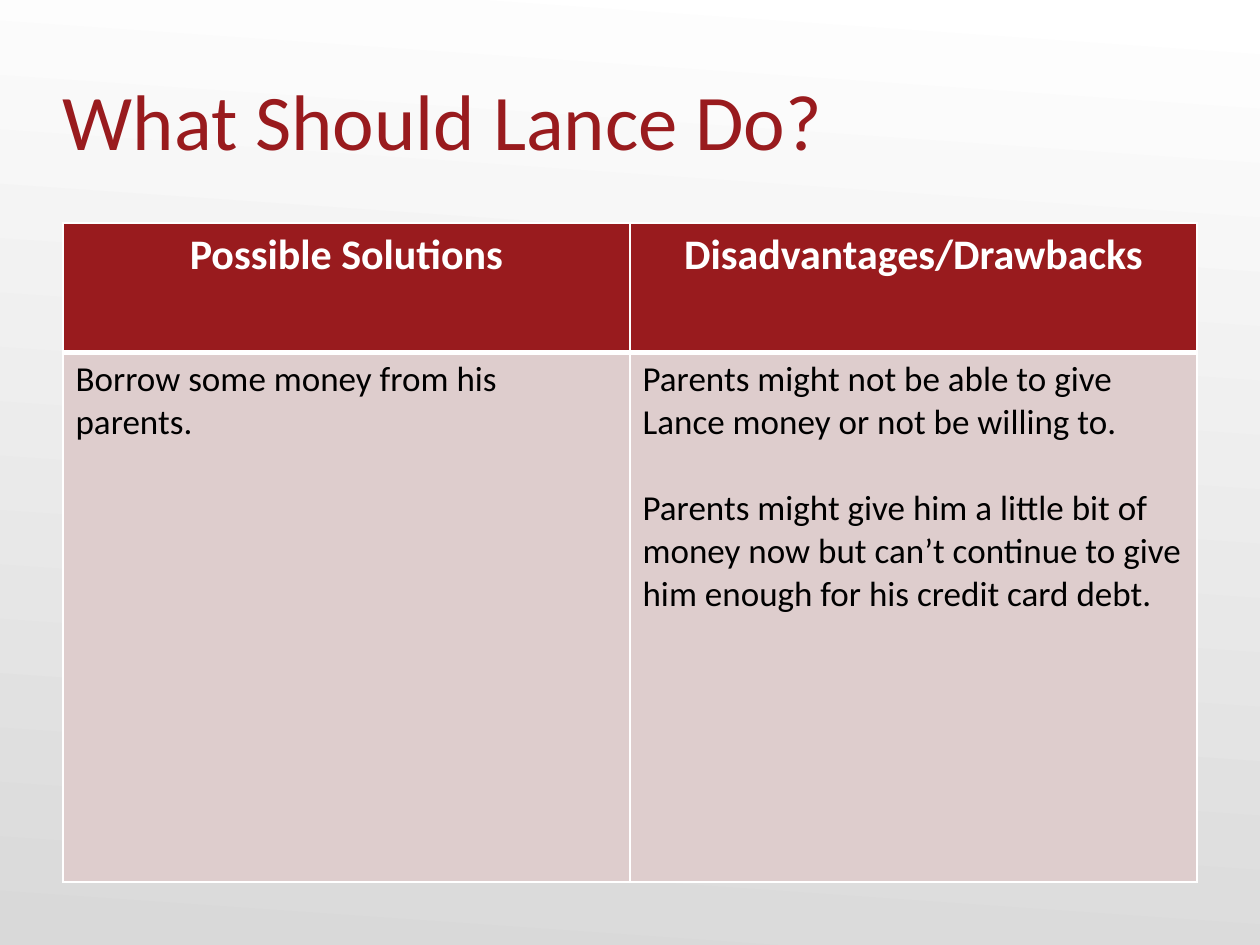
import pptx
import pptx.dml.color
import pptx.enum.text
import pptx.oxml
import pptx.oxml.ns
import pptx.util
from pptx.util import Cm

COLORS = {
    "red": "991B1E",
    "pink": "DECDCD",
    "white": "FFFFFF",
    "gray": "D9D9D9",
    "black": "000000",
}
FONT = "Calibri"
HEADERS = ["Possible Solutions", "Disadvantages/Drawbacks"]
ANSWERS = [
    ["Borrow some money from his parents."],
    [
        "Parents might not be able to give Lance money or not be willing to.",
        "Parents might give him a little bit of money now but can’t continue "
        "to give him enough for his credit card debt.",
    ],
]
HEADER_FORMAT = {"size": pptx.util.Pt(24), "bold": True}
ANSWER_FORMAT = {"size": pptx.util.Pt(20), "bold": False}


def rgb(name):
    return pptx.dml.color.RGBColor.from_string(COLORS[name])


def write_paragraphs(text_frame, texts, color, font_format, paragraph_format):
    for index, text in enumerate(texts):
        paragraph = text_frame.paragraphs[0] if index == 0 else text_frame.add_paragraph()
        for name, value in paragraph_format.items():
            setattr(paragraph, name, value)
        if index:
            paragraph.space_before = pptx.util.Pt(24.4)
        run = paragraph.add_run()
        run.text = text
        for name, value in {"name": FONT, **font_format}.items():
            setattr(run.font, name, value)
        run.font.color.rgb = rgb(color)


def set_borders(cell, widths):
    """Draw white cell borders; widths maps L, R, T, B to points."""
    properties = cell._tc.get_or_add_tcPr()
    for side, points in widths.items():
        properties.append(pptx.oxml.parse_xml(
            f'<a:ln{side} {pptx.oxml.ns.nsdecls("a")} w="{pptx.util.Pt(points)}">'
            f'<a:solidFill><a:srgbClr val="{COLORS["white"]}"/></a:solidFill></a:ln{side}>'
        ))


def fill_background(slide):
    fill = slide.background.fill
    fill.gradient()
    fill.gradient_angle = 266
    for stop, position, color in zip(fill.gradient_stops, (0, 1), ("white", "gray")):
        stop.position = position
        stop.color.rgb = rgb(color)


def add_title(slide, left, top, width, height):
    text_frame = slide.shapes.add_textbox(left, top, width, height).text_frame
    frame_format = {
        "word_wrap": True,
        "vertical_anchor": pptx.enum.text.MSO_ANCHOR.BOTTOM,
        "margin_left": 0, "margin_right": 0, "margin_top": 0, "margin_bottom": 0,
    }
    for name, value in frame_format.items():
        setattr(text_frame, name, value)
    write_paragraphs(text_frame, ["What Should Lance Do?"], "red",
                     {"size": pptx.util.Pt(45)}, {})


def add_solutions_table(slide, left, top, width, height):
    table = slide.shapes.add_table(2, len(HEADERS), left, top, width, height).table
    table.horz_banding = False
    header_height = Cm(2.6)
    table.rows[0].height = header_height
    table.rows[1].height = height - header_height
    centered = {"alignment": pptx.enum.text.PP_ALIGN.CENTER}
    rows = [
        ([[header] for header in HEADERS], "red", "white", HEADER_FORMAT, centered,
         {"L": 1, "R": 1, "T": 1, "B": 3}),
        (ANSWERS, "pink", "black", ANSWER_FORMAT, {},
         {"L": 1, "R": 1, "T": 3, "B": 1}),
    ]
    for row, (contents, fill, color, font_format, paragraph_format, widths) in enumerate(rows):
        for column, texts in enumerate(contents):
            cell = table.cell(row, column)
            set_borders(cell, widths)
            cell.fill.solid()
            cell.fill.fore_color.rgb = rgb(fill)
            write_paragraphs(cell.text_frame, texts, color, font_format, paragraph_format)


def main():
    presentation = pptx.Presentation()
    presentation.slide_width = Cm(25.4)
    presentation.slide_height = Cm(19.05)
    slide = presentation.slides.add_slide(presentation.slide_layouts[6])
    margin = Cm(1.27)
    content_width = presentation.slide_width - 2 * margin
    fill_background(slide)
    add_title(slide, margin, Cm(1.4), content_width, Cm(1.95))
    add_solutions_table(slide, margin, Cm(4.5), content_width, Cm(13.28))
    presentation.save("out.pptx")


if __name__ == "__main__":
    main()
